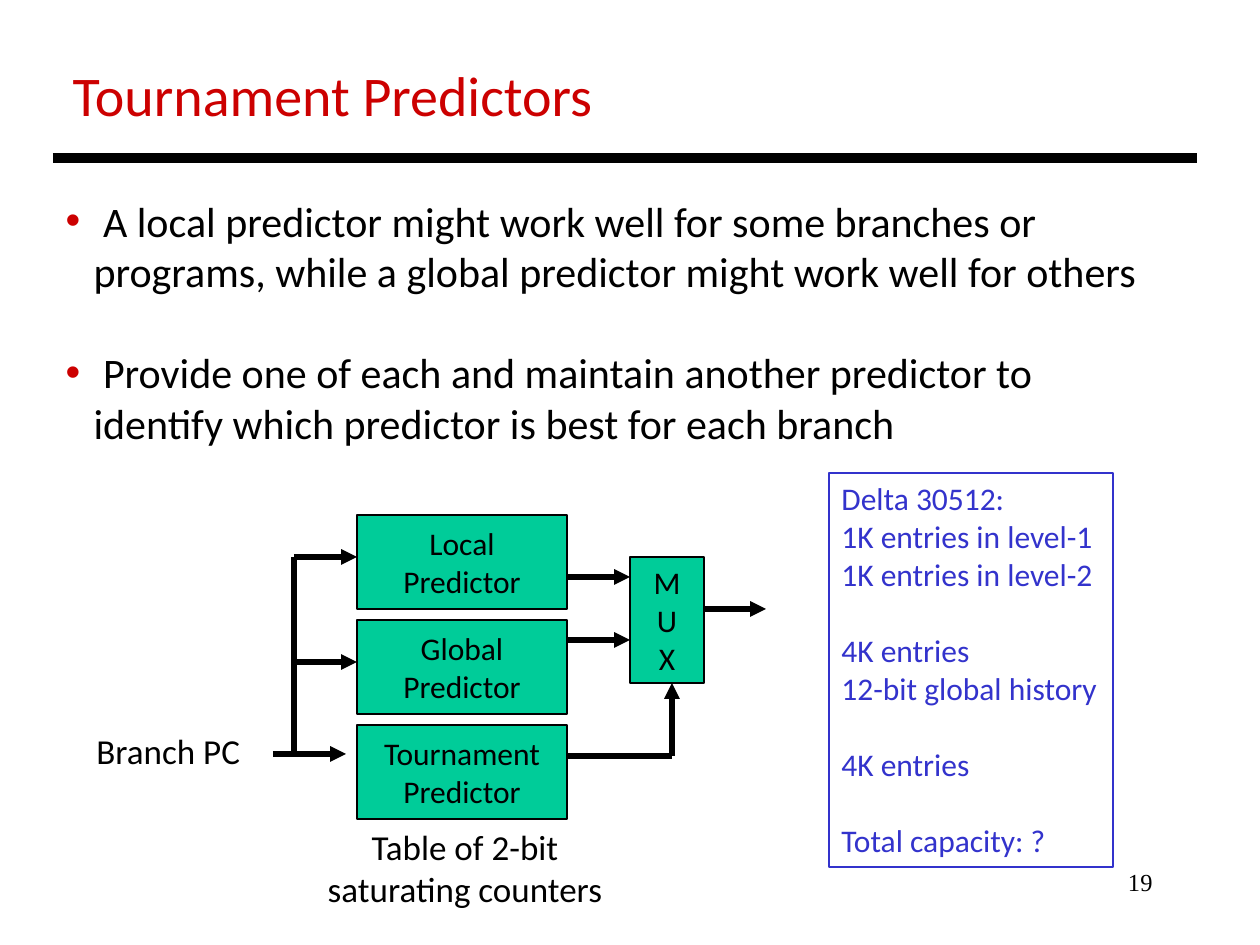
from lxml.etree import SubElement
from pptx import Presentation
from pptx.dml.color import RGBColor
from pptx.enum.shapes import MSO_CONNECTOR, MSO_SHAPE
from pptx.enum.text import MSO_ANCHOR, MSO_AUTO_SIZE, PP_ALIGN
from pptx.oxml.ns import qn
from pptx.util import Pt

# Content
TITLE = "Tournament Predictors"
BULLETS = [
    " A local predictor might work well for some branches or programs, "
    "while a global predictor might work well for others",
    " Provide one of each and maintain another predictor to "
    "identify which predictor is best for each branch",
]
PREDICTORS = ["Local", "Global", "Tournament"]
CAPACITY_GROUPS = [
    ["Delta 30512:", "1K entries in level-1", "1K entries in level-2"],
    ["4K entries", "12-bit global history"],
    ["4K entries"],
    ["Total capacity: ?"],
]
LABELS = [  # lines, box in px, alignment
    (["Branch PC"], (84, 723, 170, 55), PP_ALIGN.LEFT),
    (["Table of 2-bit", "saturating counters"], (314, 819, 302, 97), PP_ALIGN.CENTER),
]
PAGE_NUMBER = "19"

THEME = {
    "font": "Calibri", "number_font": "Times New Roman",
    "ink": "000000", "accent": "CC0000", "block": "00CC99", "note": "3333CC",
    "title": 32, "body": 24, "label": 20, "small": 18, "number": 14,
    "border": 0.75, "wire": 3, "rule": 6,
}

# Diagram grid in px
EMU_PER_PX = 914400 / 126
BLOCK_X, BLOCK_Y, BLOCK_W, BLOCK_H, BLOCK_STEP = 357, 515, 210, 94, 105
MUX_X, MUX_Y, MUX_W, MUX_H = 630, 557, 74, 126
BLOCK_RIGHT, MUX_RIGHT = BLOCK_X + BLOCK_W, MUX_X + MUX_W
TRUNK_X, SELECT_X = 294, 672
LOCAL_Y, GLOBAL_Y, BRANCH_Y, SELECT_Y = 557, 662, 754, 756
WIRES = [  # from x, from y, to x, to y, arrowhead
    (273, BRANCH_Y, 346, BRANCH_Y, True),
    (TRUNK_X, SELECT_Y, TRUNK_X, LOCAL_Y, False),
    (TRUNK_X, LOCAL_Y, BLOCK_X, LOCAL_Y, True),
    (TRUNK_X, GLOBAL_Y, BLOCK_X, GLOBAL_Y, True),
    (BLOCK_RIGHT, 577, MUX_X, 577, True),
    (BLOCK_RIGHT, 640, MUX_X, 640, True),
    (BLOCK_RIGHT, SELECT_Y, SELECT_X, SELECT_Y, False),
    (SELECT_X, SELECT_Y, SELECT_X, MUX_Y + MUX_H, True),
    (MUX_RIGHT, 609, 766, 609, True),
]


def px(value):
    return round(value * EMU_PER_PX)


def colour(name):
    return RGBColor.from_string(THEME[name])


def place(shape, *box):
    for name, value in zip(("left", "top", "width", "height"), box):
        setattr(shape, name, px(value))


def write(shape, lines, size, ink="ink", font="font", align=PP_ALIGN.LEFT,
          anchor=MSO_ANCHOR.TOP, wrap=False):
    frame = shape.text_frame
    frame_format = {"word_wrap": wrap, "auto_size": MSO_AUTO_SIZE.NONE,
                    "vertical_anchor": anchor}
    for name, value in frame_format.items():
        setattr(frame, name, value)
    frame.text = "\n".join(lines)
    for para in frame.paragraphs:
        para.alignment = align
        para.space_before = Pt(0)
        for span in para.runs:
            span.font.name = THEME[font]
            span.font.size = Pt(THEME[size])
            span.font.color.rgb = colour(ink)
    return frame.paragraphs


def add_box(page, box, line, fill=None):
    shape = page.shapes.add_shape(MSO_SHAPE.RECTANGLE, *map(px, box))
    shape.shadow.inherit = False
    if fill:
        shape.fill.solid()
        shape.fill.fore_color.rgb = colour(fill)
    else:
        shape.fill.background()
    shape.line.color.rgb = colour(line)
    shape.line.width = Pt(THEME["border"])
    return shape


def add_block(page, box, lines):
    write(add_box(page, box, "ink", "block"), lines, "small",
          align=PP_ALIGN.CENTER, anchor=MSO_ANCHOR.MIDDLE)


def add_line(page, ends, width, arrow=False):
    wire = page.shapes.add_connector(MSO_CONNECTOR.STRAIGHT, *map(px, ends))
    wire.line.color.rgb = colour("ink")
    wire.line.width = Pt(THEME[width])
    if arrow:
        SubElement(wire.line._get_or_add_ln(), qn("a:tailEnd"), type="triangle")
    SubElement(wire._element.spPr, qn("a:effectLst"))


def add_bullet(para, hang):
    properties = para._p.get_or_add_pPr()
    properties.set("marL", str(px(hang)))
    properties.set("indent", str(-px(hang)))
    tint = SubElement(properties, qn("a:buClr"))
    SubElement(tint, qn("a:srgbClr"), val=THEME["accent"])
    SubElement(properties, qn("a:buFont"), typeface="Arial")
    SubElement(properties, qn("a:buChar"), char="•")


def main():
    deck = Presentation()
    deck.slide_width, deck.slide_height = px(1260), px(945)
    page = deck.slides.add_slide(deck.slide_layouts[1])

    # Title, rule and bullets
    place(page.shapes.title, 60, 54, 551, 81)
    write(page.shapes.title, [TITLE], "title", "accent")
    add_line(page, (53, 158, 1197, 158), "rule")
    body = page.placeholders[1]
    place(body, 53, 189, 1110, 267)
    paras = write(body, BULLETS, "body", wrap=True)
    paras[1].space_before = Pt(29)
    for para in paras:
        add_bullet(para, 28)

    # Predictors, multiplexer and wires
    for row, name in enumerate(PREDICTORS):
        box = (BLOCK_X, BLOCK_Y + row * BLOCK_STEP, BLOCK_W, BLOCK_H)
        add_block(page, box, [name, "Predictor"])
    add_block(page, (MUX_X, MUX_Y, MUX_W, MUX_H), list("MUX"))
    for *ends, arrow in WIRES:
        add_line(page, ends, "wire", arrow)

    # Labels
    for lines, box, align in LABELS:
        write(page.shapes.add_textbox(*map(px, box)), lines, "label", align=align)

    # Capacity note, one line of space between groups
    note = add_box(page, (829, 473, 284, 394), "note")
    paras = write(note, sum(CAPACITY_GROUPS, []), "small", "note")
    start = 0
    for group in CAPACITY_GROUPS[:-1]:
        start += len(group)
        paras[start].space_before = Pt(22)

    # Page number
    number = page.shapes.add_textbox(*map(px, (903, 861, 262, 63)))
    write(number, [PAGE_NUMBER], "number", font="number_font", align=PP_ALIGN.RIGHT)

    deck.save("out.pptx")


if __name__ == "__main__":
    main()
